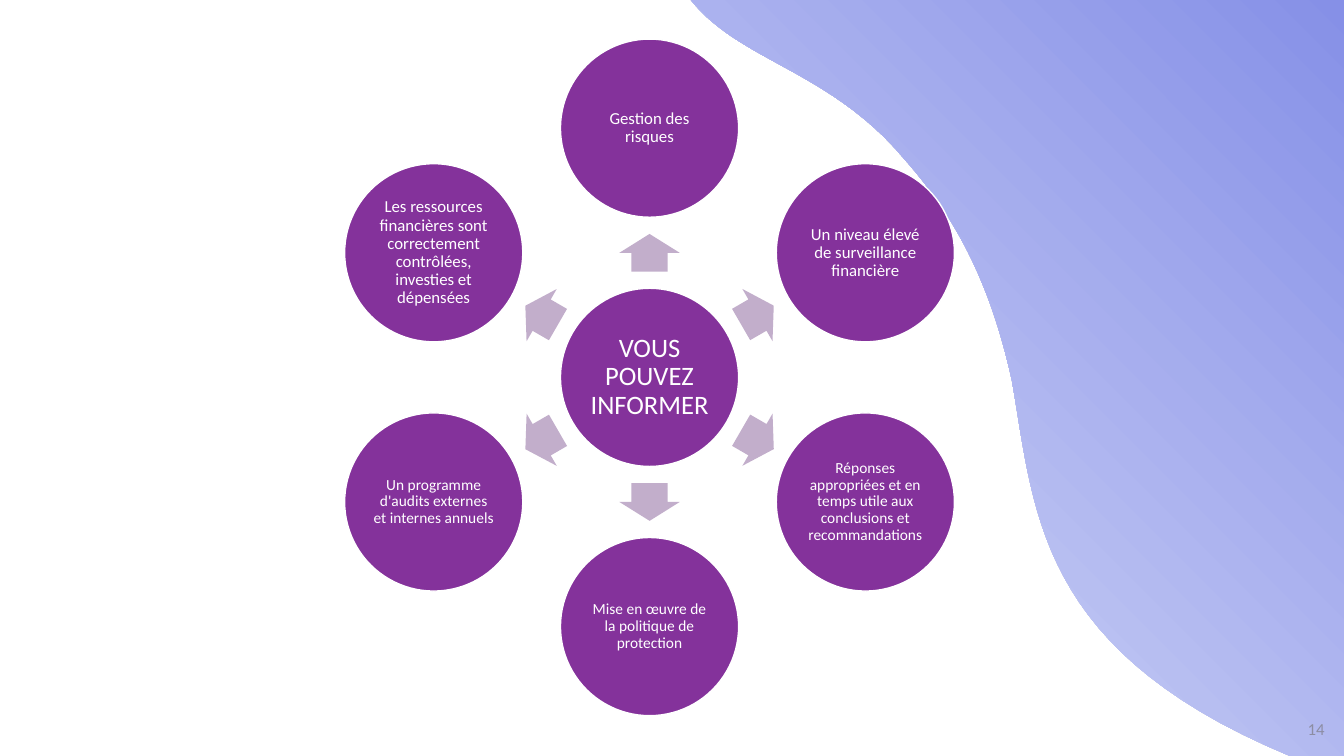
import math

import pptx
import pptx.dml.color
import pptx.enum.shapes
import pptx.enum.text
import pptx.util

Cm = pptx.util.Cm
SHAPES = pptx.enum.shapes.MSO_SHAPE
ALIGN = pptx.enum.text.PP_ALIGN
ANCHOR = pptx.enum.text.MSO_ANCHOR
COLOURS = {
    "circle": "84329B",
    "arrow": "C2AECB",
    "white": "FFFFFF",
    "number": "8C8DA3",
    "wave light": "D8DCF8",
    "wave dark": "8690E7",
}


def colour(name):
    return pptx.dml.color.RGBColor.from_string(COLOURS[name])


def write(shape, text, size, ink="white", align=ALIGN.CENTER, anchor=ANCHOR.MIDDLE, inset=0.05, spacing=0.9):
    frame = shape.text_frame
    frame.word_wrap = True
    frame.vertical_anchor = anchor
    frame.margin_left = frame.margin_right = Cm(inset)
    frame.margin_top = frame.margin_bottom = Cm(inset)
    para = frame.paragraphs[0]
    para.alignment = align
    para.line_spacing = spacing
    span = para.add_run()
    span.text = text
    span.font.name = "Calibri"
    span.font.size = pptx.util.Pt(size)
    span.font.color.rgb = colour(ink)


deck = pptx.Presentation()
deck.slide_width, deck.slide_height = Cm(33.87), Cm(19.05)
page = deck.slides.add_slide(deck.slide_layouts[6])

wave_curves = [
    [(17.41, 0), (18.65, 1.56), (20.92, 1.76), (22.81, 4.03)],
    [(22.81, 4.03), (24.19, 5.59), (25, 7.31), (25.5, 9.58)],
    [(25.5, 9.58), (26.08, 12.85), (26.08, 16.38), (32.51, 19.05)],
]
steps = 30
edge = []
for curve in wave_curves:
    for step in range(1, steps + 1):
        t = step / steps
        weights = [math.comb(3, k) * t**k * (1 - t) ** (3 - k) for k in range(4)]
        edge.append(tuple(Cm(sum(w * point[axis] for w, point in zip(weights, curve))) for axis in (0, 1)))
builder = page.shapes.build_freeform(Cm(17.41), 0)
builder.add_line_segments(edge + [(deck.slide_width, deck.slide_height), (deck.slide_width, 0)])
wave = builder.convert_to_shape()
wave.shadow.inherit = False
wave.line.fill.background()
wave.fill.gradient()
wave.fill.gradient_angle = 45
for stop, name in zip(wave.fill.gradient_stops, ("wave light", "wave dark")):
    stop.color.rgb = colour(name)

number = page.shapes.add_textbox(Cm(25.76), Cm(17.6), Cm(7.62), Cm(1.02))
write(number, "14", 12, ink="number", align=ALIGN.RIGHT, anchor=ANCHOR.BOTTOM, inset=0, spacing=1)

centre_x, centre_y = 16.37, 9.51
diameter, circle_orbit = 4.49, 6.28
arrow_width, arrow_height, arrow_orbit = 0.95, 1.52, 3.14
topics = [
    ("Gestion des risques", 12),
    ("Un niveau élevé de surveillance financière", 12),
    ("Réponses appropriées et en temps utile aux conclusions et recommandations", 11),
    ("Mise en œuvre de la politique de protection", 11),
    ("Un programme d'audits externes et internes annuels", 11),
    ("Les ressources financières sont correctement contrôlées, investies et dépensées", 12),
]
circles = [("VOUS POUVEZ INFORMER", 19, centre_x, centre_y)]
for index, (topic, size) in enumerate(topics):
    angle = index * 360 / len(topics) - 90
    across, down = math.cos(math.radians(angle)), math.sin(math.radians(angle))
    circles.append((topic, size, centre_x + circle_orbit * across, centre_y + circle_orbit * down))
    arrow = page.shapes.add_shape(
        SHAPES.RIGHT_ARROW,
        Cm(centre_x + arrow_orbit * across - arrow_width / 2),
        Cm(centre_y + arrow_orbit * down - arrow_height / 2),
        Cm(arrow_width),
        Cm(arrow_height),
    )
    arrow.adjustments[0], arrow.adjustments[1] = 0.6, 0.5
    arrow.rotation = angle % 360
    arrow.shadow.inherit = False
    arrow.fill.solid()
    arrow.fill.fore_color.rgb = colour("arrow")
    arrow.line.fill.background()

for text, size, x, y in circles:
    circle = page.shapes.add_shape(
        SHAPES.OVAL, Cm(x - diameter / 2), Cm(y - diameter / 2), Cm(diameter), Cm(diameter)
    )
    circle.shadow.inherit = False
    circle.fill.solid()
    circle.fill.fore_color.rgb = colour("circle")
    circle.line.color.rgb = colour("white")
    circle.line.width = pptx.util.Pt(1)
    write(circle, text, size)

deck.save("out.pptx")
